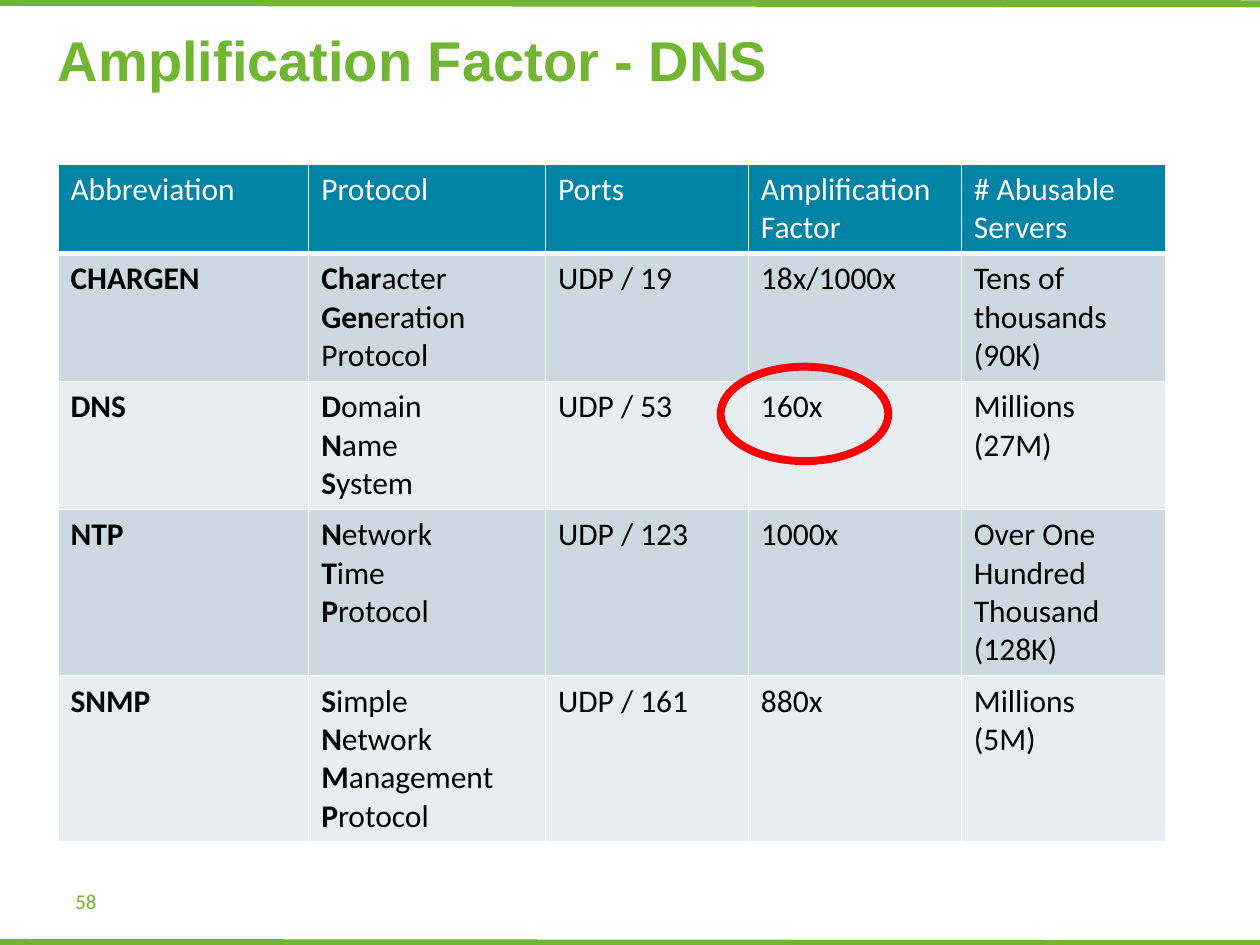
from lxml.etree import SubElement
from pptx import Presentation
from pptx.dml.color import RGBColor
from pptx.enum.shapes import MSO_CONNECTOR, MSO_SHAPE
from pptx.enum.text import MSO_ANCHOR, PP_ALIGN
from pptx.oxml.ns import qn
from pptx.util import Inches, Pt

GREEN = "71B532"


def paint(target, color):
    target.solid()
    target.fore_color.rgb = RGBColor.from_string(color)


def style(font, color, **values):
    paint(font.fill, color)
    for name, value in values.items():
        setattr(font, name, value)


deck = Presentation()
deck.slide_width, deck.slide_height = Inches(10), Inches(7.5)
slide = deck.slides.add_slide(deck.slide_layouts[5])

# Green rules along the bottom and top edges
for y in (7.48, 0.02):
    rule = slide.shapes.add_connector(
        MSO_CONNECTOR.STRAIGHT, Inches(0), Inches(y), Inches(10.02), Inches(y + 0.01))
    paint(rule.line.fill, GREEN)
    rule.line.width = Pt(4)
    SubElement(rule._element.spPr, qn("a:effectLst"))

# Protocol table: a bar ends the bold start of a line
rows = [
    ["Abbreviation", "Protocol", "Ports", "Amplification\nFactor", "# Abusable\nServers"],
    ["CHARGEN|", "Char|acter\nGen|eration\nProtocol", "UDP / 19", "18x/1000x",
     "Tens of thousands\n(90K)"],
    ["DNS|", "D|omain\nN|ame\nS|ystem", "UDP / 53", "160x", "Millions (27M)"],
    ["NTP|", "N|etwork\nT|ime\nP|rotocol", "UDP / 123", "1000x",
     "Over One Hundred Thousand\n(128K)"],
    ["SNMP|", "S|imple\nN|etwork\nM|anagement\nP|rotocol", "UDP / 161", "880x",
     "Millions\n(5M)"],
]
widths = [1.99, 1.88, 1.61, 1.69, 1.62]
heights = [0.68, 1.01, 1.01, 1.3, 1.3]
table = slide.shapes.add_table(
    len(rows), len(widths), Inches(0.46), Inches(1.3),
    Inches(sum(widths)), Inches(sum(heights))).table
for col, width in zip(table.columns, widths):
    col.width = Inches(width)
for row, height in zip(table.rows, heights):
    row.height = Inches(height)

for r, row in enumerate(rows):
    back = "0083A5" if r == 0 else ("E7EDF0", "CCD9E1")[r % 2]
    ink = "FFFFFF" if r == 0 else "000000"
    for c, text in enumerate(row):
        cell = table.cell(r, c)

        # White borders, thicker under the header
        for side in "LRTB":
            thick = (r, side) in ((0, "B"), (1, "T"))
            edge = SubElement(cell._tc.get_or_add_tcPr(), qn("a:ln" + side),
                              w=str(Pt(3 if thick else 1)))
            fill = SubElement(edge, qn("a:solidFill"))
            SubElement(fill, qn("a:srgbClr"), val="FFFFFF")
        paint(cell.fill, back)

        # Cell text
        for n, line in enumerate(text.split("\n")):
            frame = cell.text_frame
            para = frame.add_paragraph() if n else frame.paragraphs[0]
            head, _, tail = line.rpartition("|")
            for part, bold in ((head, True), (tail, False)):
                if part:
                    run = para.add_run()
                    run.text = part
                    style(run.font, ink, name="Calibri", size=Pt(18), bold=bold)

# Red ring around the DNS factor
ring = slide.shapes.add_shape(
    MSO_SHAPE.OVAL, Inches(5.72), Inches(2.91), Inches(1.33), Inches(0.75))
ring.shadow.inherit = False
ring.fill.background()
paint(ring.line.fill, "FF0000")
ring.line.width = Pt(4.5)

# Title and page number
title = slide.shapes.title
title.left, title.top, title.width, title.height = map(Inches, (0.36, 0.15, 9.28, 0.64))
page = slide.shapes.add_textbox(Inches(0.5), Inches(6.95), Inches(2.33), Inches(0.4))
for box, text, form in (
    (title, "Amplification Factor - DNS", {"name": "Arial", "size": Pt(32), "bold": True}),
    (page, "58", {"name": "Calibri", "size": Pt(12)}),
):
    frame = box.text_frame
    frame.word_wrap = True
    frame.vertical_anchor = MSO_ANCHOR.MIDDLE
    para = frame.paragraphs[0]
    para.alignment = PP_ALIGN.LEFT
    run = para.add_run()
    run.text = text
    style(run.font, GREEN, **form)

deck.save("out.pptx")
